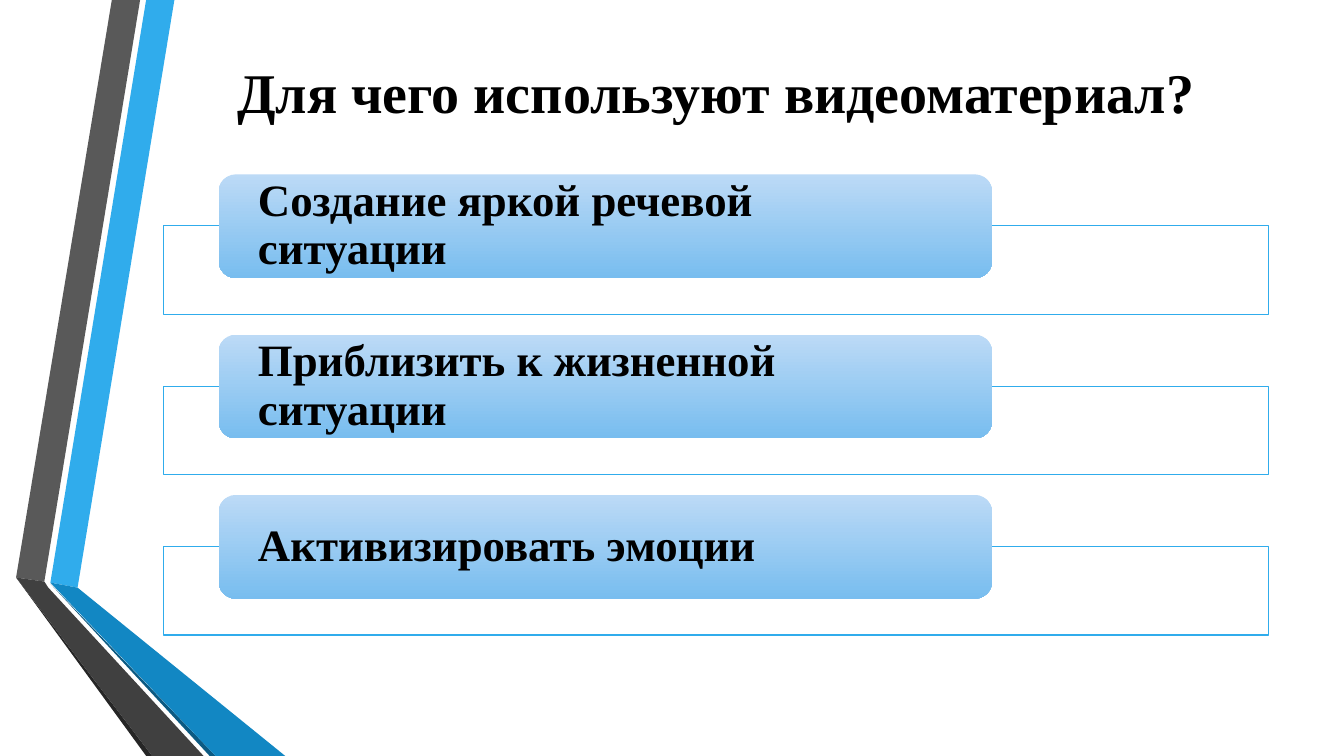
from lxml.etree import SubElement
from pptx import Presentation
from pptx.dml.color import RGBColor
from pptx.enum.shapes import MSO_SHAPE as Shape
from pptx.enum.text import MSO_ANCHOR as Anchor, PP_ALIGN as Align
from pptx.oxml.ns import qn
from pptx.util import Inches, Pt

WHITE = RGBColor(0xFF, 0xFF, 0xFF)
BLACK = RGBColor(0x00, 0x00, 0x00)
BLUE = RGBColor(0x30, 0xAC, 0xEC)
MID_BLUE = RGBColor(0x12, 0x87, 0xC3)
DARK_BLUE = RGBColor(0x0C, 0x5A, 0x82)
GRAY = RGBColor(0x59, 0x59, 0x59)
DARK_GRAY = RGBColor(0x40, 0x40, 0x40)
SHADE_GRAY = RGBColor(0x26, 0x26, 0x26)
PALE_TOP = RGBColor(0xBC, 0xDA, 0xF6)
PALE_BOTTOM = RGBColor(0x78, 0xBD, 0xEF)

FONT = "Times New Roman"
TITLE = "Для чего используют видеоматериал?"
PURPOSES = [
    "Создание яркой речевой ситуации",
    "Приблизить к жизненной ситуации",
    "Активизировать эмоции",
]
RIBBONS = [
    (BLUE, [(0.34, 5.78), (0.61, 5.83), (1.57, 0), (1.29, 0)]),
    (GRAY, [(1.23, 0), (0.95, 0), (0, 5.73), (0.28, 5.77)]),
    (SHADE_GRAY, [(0, 5.73), (1.29, 7.5), (1.35, 7.5)]),
    (DARK_BLUE, [(0.34, 5.79), (1.92, 7.5), (1.98, 7.5)]),
    (MID_BLUE, [(0.34, 5.78), (1.98, 7.5), (2.67, 7.5), (0.61, 5.83)]),
    (DARK_GRAY, [(0, 5.73), (1.35, 7.5), (1.86, 7.5), (0.32, 5.83), (0.28, 5.77)]),
]


def write_text(frame, text, size, align=Align.LEFT, spacing=1.0, inset=0.1):
    frame.word_wrap = True
    frame.vertical_anchor = Anchor.MIDDLE
    frame.margin_left = frame.margin_right = Inches(inset)
    frame.margin_top = frame.margin_bottom = 0
    para = frame.paragraphs[0]
    para.alignment = align
    para.line_spacing = spacing
    span = para.add_run()
    span.text = text
    span.font.name = FONT
    span.font.size = Pt(size)
    span.font.bold = True
    span.font.color.rgb = BLACK


def add_ribbons(page, left, top):
    for color, corners in RIBBONS:
        points = [(Inches(left + x), Inches(top + y)) for x, y in corners]
        builder = page.shapes.build_freeform(*points[0])
        builder.add_line_segments(points[1:], close=True)
        ribbon = builder.convert_to_shape()
        ribbon.shadow.inherit = False
        ribbon.fill.solid()
        ribbon.fill.fore_color.rgb = color
        ribbon.line.fill.background()


def add_title(page, left, top, width, height):
    title = page.shapes.title
    title.left, title.top = Inches(left), Inches(top)
    title.width, title.height = Inches(width), Inches(height)
    write_text(title.text_frame, TITLE, 40, align=Align.CENTER)


def add_purpose(page, text, left, top, width):
    frame = page.shapes.add_shape(
        Shape.RECTANGLE, Inches(left), Inches(top + 0.51), Inches(width), Inches(0.88))
    frame.shadow.inherit = False
    frame.fill.solid()
    frame.fill.fore_color.rgb = WHITE
    color = frame.fill._xPr.find(qn("a:solidFill"))[0]
    SubElement(color, qn("a:alpha")).set("val", "90000")
    frame.line.color.rgb = BLUE
    frame.line.width = Pt(0.75)

    label = page.shapes.add_shape(
        Shape.ROUNDED_RECTANGLE, Inches(left + width * 0.05), Inches(top),
        Inches(width * 0.7), Inches(1.03))
    label.shadow.inherit = False
    label.fill.gradient()
    label.fill.gradient_angle = 270
    for stop, shade in zip(label.fill.gradient_stops, (PALE_TOP, PALE_BOTTOM)):
        stop.color.rgb = shade
    label.line.fill.background()
    write_text(label.text_frame, text, 32, spacing=0.9, inset=0.34)


def add_purposes(page, left, top, width, pitch):
    for row, text in enumerate(PURPOSES):
        add_purpose(page, text, left, top + row * pitch, width)


def main():
    deck = Presentation()
    deck.slide_width, deck.slide_height = Inches(13.33), Inches(7.5)
    page = deck.slides.add_slide(deck.slide_layouts[5])
    add_ribbons(page, 0.16, 0)
    add_title(page, 1.62, 0.1, 10.96, 1.6)
    add_purposes(page, 1.62, 1.73, 10.96, 1.59)
    deck.save("out.pptx")


if __name__ == "__main__":
    main()
